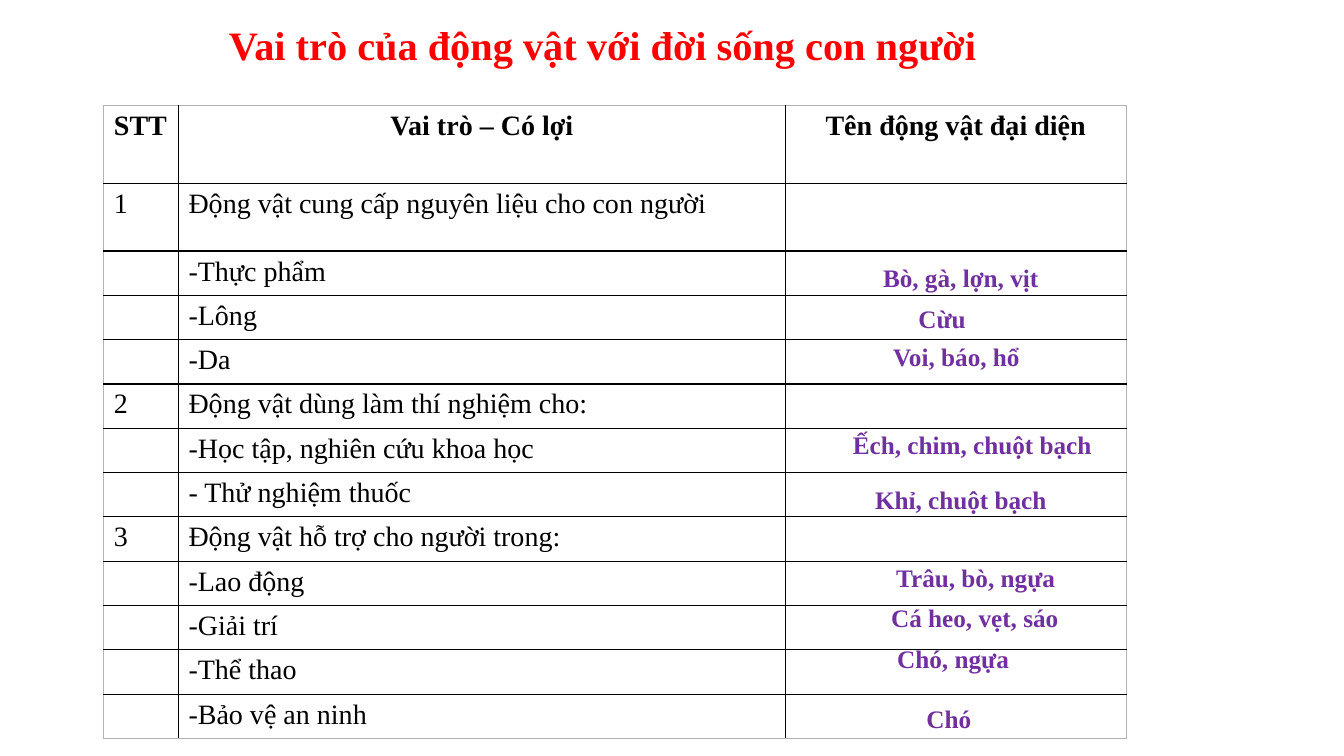
import pptx
import pptx.dml.color
import pptx.enum.text
import pptx.oxml
import pptx.oxml.ns
import pptx.util

Inches = pptx.util.Inches
ALIGN = pptx.enum.text.PP_ALIGN
FONT = "Times New Roman"
COLORS = {"title": "FF0000", "text": "000000", "answer": "7030A0",
          "cell": "FFFFFF", "inner": "000000", "outer": "B2B2B2"}

HEADERS = ["STT", "Vai trò – Có lợi", "Tên động vật đại diện"]
ROLES = [
    ("1", "Động vật cung cấp nguyên liệu cho con người"),
    ("", "-Thực phẩm"),
    ("", "-Lông"),
    ("", "-Da"),
    ("2", "Động vật dùng làm thí nghiệm cho:"),
    ("", "-Học tập, nghiên cứu khoa học"),
    ("", "- Thử nghiệm thuốc"),
    ("3", "Động vật hỗ trợ cho người trong:"),
    ("", "-Lao động"),
    ("", "-Giải trí"),
    ("", "-Thể thao"),
    ("", "-Bảo vệ an ninh"),
]
COLUMN_WIDTHS = [0.74, 6.02, 3.38]
ROW_HEIGHTS = [0.77, 0.67] + [0.44] * 11

# Animal names: text, then left, top and width measured from the table corner
ANSWERS = [
    ("Cừu", 7.98, 1.91, 0.68),
    ("Bò, gà, lợn, vịt", 7.63, 1.5, 1.76),
    ("Voi, báo, hổ", 7.73, 2.29, 1.47),
    ("Ếch, chim, chuột bạch", 7.33, 3.16, 2.59),
    ("Khỉ, chuột bạch", 7.55, 3.71, 1.92),
    ("Trâu, bò, ngựa", 7.76, 4.48, 1.79),
    ("Cá heo, vẹt, sáo", 7.71, 4.88, 1.88),
    ("Chó, ngựa", 7.77, 5.28, 1.32),
    ("Chó", 8.06, 5.88, 0.65),
]


def color(name):
    return pptx.dml.color.RGBColor.from_string(COLORS[name])


def format_text(para, size, color_name, bold):
    for span in para.runs:
        span.font.name = FONT
        span.font.size = pptx.util.Pt(size)
        span.font.bold = bold
        span.font.color.rgb = color(color_name)


def set_borders(cell, edges):
    """Draw the left, right, top and bottom borders in the named colours."""
    properties = cell._tc.get_or_add_tcPr()
    for index, (side, name) in enumerate(zip("LRTB", edges)):
        properties.insert(index, pptx.oxml.parse_xml(
            f'<a:ln{side} {pptx.oxml.ns.nsdecls("a")} w="12700"><a:solidFill>'
            f'<a:srgbClr val="{COLORS[name]}"/></a:solidFill></a:ln{side}>'))


def add_title(page, left, top, width, height):
    title = page.shapes.title
    title.left, title.top = Inches(left), Inches(top)
    title.width, title.height = Inches(width), Inches(height)
    frame = title.text_frame
    frame.text = "Vai trò của động vật với đời sống con người"
    frame.auto_size = pptx.enum.text.MSO_AUTO_SIZE.NONE
    frame.vertical_anchor = pptx.enum.text.MSO_ANCHOR.MIDDLE
    para = frame.paragraphs[0]
    para.alignment = ALIGN.LEFT
    para.line_spacing = 0.9
    format_text(para, 28.8, "title", True)


def add_role_table(page, left, top, width, height):
    rows = [HEADERS] + [[number, role, ""] for number, role in ROLES]
    last_row, last_column = len(rows) - 1, len(HEADERS) - 1
    table = page.shapes.add_table(len(rows), len(HEADERS), Inches(left), Inches(top),
                                  Inches(width), Inches(height)).table
    table.first_row = table.horz_banding = False
    for column, column_width in zip(table.columns, COLUMN_WIDTHS):
        column.width = Inches(column_width)
    for r, values in enumerate(rows):
        table.rows[r].height = Inches(ROW_HEIGHTS[r])
        for c, value in enumerate(values):
            cell = table.cell(r, c)
            cell.fill.solid()
            cell.fill.fore_color.rgb = color("cell")
            on_edge = [c == 0, c == last_column, r == 0, r == last_row]
            set_borders(cell, ["outer" if edge else "inner" for edge in on_edge])
            cell.text_frame.text = value
            para = cell.text_frame.paragraphs[0]
            para.alignment = ALIGN.CENTER if r == 0 and c > 0 else ALIGN.LEFT
            format_text(para, 20, "text", r == 0)


def add_answers(page, left, top):
    for text, across, down, width in ANSWERS:
        box = page.shapes.add_textbox(Inches(left + across), Inches(top + down),
                                      Inches(width), Inches(0.4))
        frame = box.text_frame
        frame.text = text
        frame.word_wrap = False
        frame.auto_size = pptx.enum.text.MSO_AUTO_SIZE.SHAPE_TO_FIT_TEXT
        format_text(frame.paragraphs[0], 18, "answer", True)


def main():
    deck = pptx.Presentation()
    deck.slide_width, deck.slide_height = Inches(13.33), Inches(7.5)
    page = deck.slides.add_slide(deck.slide_layouts[5])
    add_title(page, 2.17, 0.21, 7.69, 0.53)
    add_role_table(page, 1.03, 1.05, sum(COLUMN_WIDTHS), sum(ROW_HEIGHTS))
    add_answers(page, 1.03, 1.05)
    deck.save("out.pptx")


if __name__ == "__main__":
    main()
